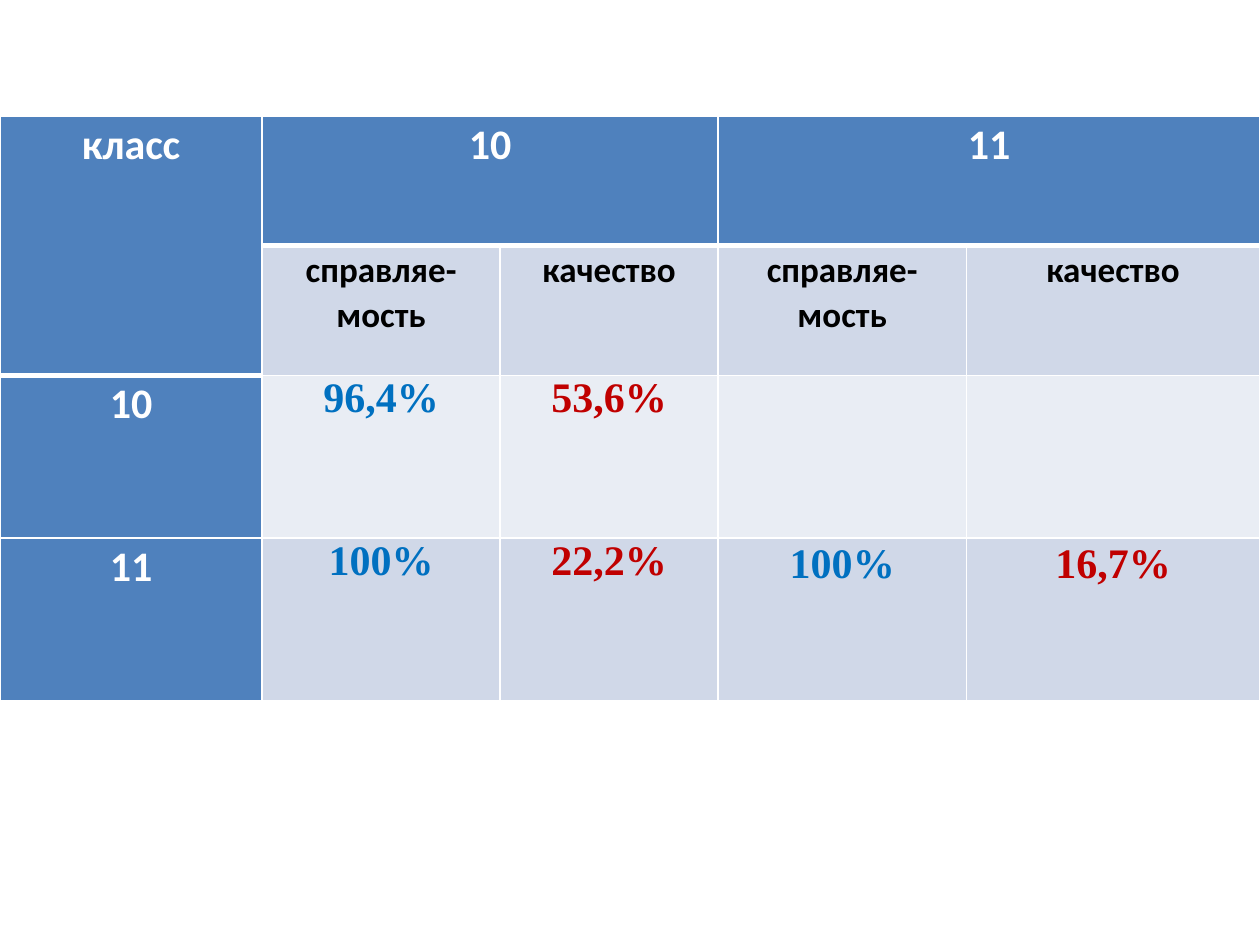
import dataclasses

import lxml.etree
import pptx
import pptx.dml.color
import pptx.enum.text
import pptx.oxml.ns
import pptx.util

Inches = pptx.util.Inches
Pt = pptx.util.Pt


@dataclasses.dataclass(frozen=True)
class Theme:
    """Colours, fonts and sizes of the slide."""

    header: str = "4F81BD"
    band_dark: str = "D0D8E8"
    band_light: str = "E9EDF4"
    white: str = "FFFFFF"
    black: str = "000000"
    pass_rate: str = "0070C0"
    quality: str = "C00000"
    label_font: str = "Calibri"
    value_font: str = "Times New Roman"
    large: int = 24
    small: int = 20
    thin: int = 1
    thick: int = 3
    spacing: float = 1.07


THEME = Theme()
COLUMN_SHARES = (2.08, 1.89, 1.73, 1.97, 2.33)
ROW_SHARES = (1.03, 1.03, 1.29, 1.29)
ROWS = (
    ("класс", "10", "", "11", ""),
    ("", "справляе-\nмость", "качество", "справляе-\nмость", "качество"),
    ("10", "96,4%", "53,6%", "", ""),
    ("11", "100%", "22,2%", "100%", "16,7%"),
)


def set_borders(cell, top, bottom):
    """Draw white cell borders with the given top and bottom widths."""
    properties = cell._tc.get_or_add_tcPr()
    widths = {"a:lnL": THEME.thin, "a:lnR": THEME.thin, "a:lnT": top, "a:lnB": bottom}
    for tag, width in widths.items():
        line = lxml.etree.SubElement(properties, pptx.oxml.ns.qn(tag), w=str(Pt(width)))
        fill = lxml.etree.SubElement(line, pptx.oxml.ns.qn("a:solidFill"))
        lxml.etree.SubElement(fill, pptx.oxml.ns.qn("a:srgbClr"), val=THEME.white)


def write_text(cell, text, font_name, size, color, spacing):
    """Write centred bold text into a cell."""
    cell.margin_left = cell.margin_right = Inches(0.07)
    cell.margin_top = cell.margin_bottom = 0
    cell.text_frame.text = text
    for paragraph in cell.text_frame.paragraphs:
        paragraph.alignment = pptx.enum.text.PP_ALIGN.CENTER
        paragraph.line_spacing = spacing
        for run in paragraph.runs:
            run.font.name = font_name
            run.font.size = Pt(size)
            run.font.bold = True
            run.font.color.rgb = pptx.dml.color.RGBColor.from_string(color)


def style_cell(cell, row, column, text):
    """Format a cell by its place in the grid."""
    is_header = row == 0 or column == 0
    last_header_row = 1 if column == 0 else 0
    set_borders(
        cell,
        THEME.thick if row == last_header_row + 1 else THEME.thin,
        THEME.thick if row == last_header_row else THEME.thin,
    )
    band = THEME.band_light if row == 2 else THEME.band_dark
    cell.fill.solid()
    cell.fill.fore_color.rgb = pptx.dml.color.RGBColor.from_string(
        THEME.header if is_header else band
    )
    if is_header:
        write_text(cell, text, THEME.label_font, THEME.large, THEME.white, THEME.spacing)
    elif row == 1:
        write_text(cell, text, THEME.label_font, THEME.small, THEME.black, THEME.spacing)
    else:
        color = THEME.pass_rate if column % 2 else THEME.quality
        spacing = THEME.spacing if column > 2 else 1.0
        write_text(cell, text, THEME.value_font, THEME.large, color, spacing)


def add_results_table(slide, left, top, width, height):
    """Place the table of class results in the given box."""
    results = slide.shapes.add_table(
        len(ROWS), len(COLUMN_SHARES), left, top, width, height
    ).table
    results.first_row = results.horz_banding = False
    for column, share in zip(results.columns, COLUMN_SHARES):
        column.width = int(width * share / sum(COLUMN_SHARES))
    for row, share in zip(results.rows, ROW_SHARES):
        row.height = int(height * share / sum(ROW_SHARES))
    for row, texts in enumerate(ROWS):
        for column, text in enumerate(texts):
            style_cell(results.cell(row, column), row, column, text)
    results.cell(0, 0).merge(results.cell(1, 0))
    for column in (1, 3):
        results.cell(0, column).merge(results.cell(0, column + 1))


def main():
    """Build and save the presentation."""
    presentation = pptx.Presentation()
    presentation.slide_width = Inches(10)
    presentation.slide_height = Inches(7.5)
    slide = presentation.slides.add_slide(presentation.slide_layouts[6])
    add_results_table(slide, 0, Inches(0.92), Inches(10), Inches(4.64))
    presentation.save("out.pptx")


if __name__ == "__main__":
    main()
